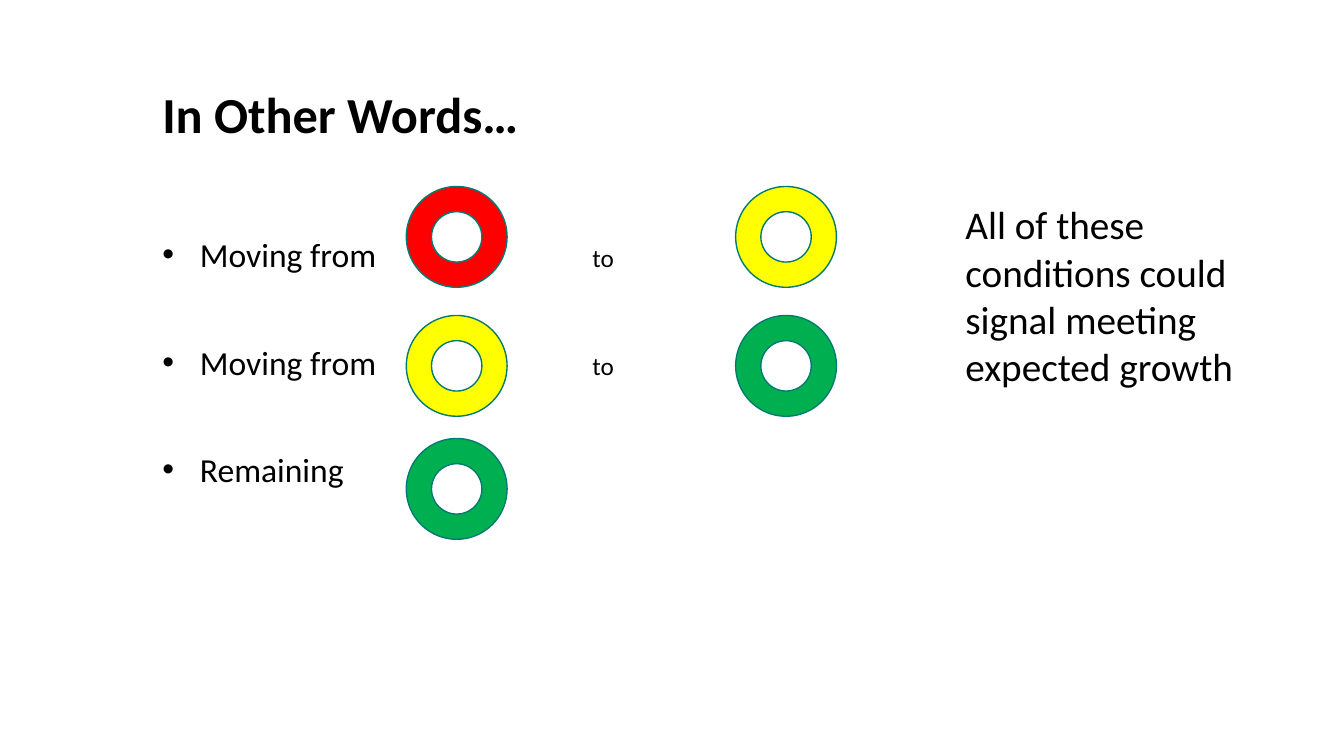
from dataclasses import dataclass

from lxml.etree import SubElement
from pptx import Presentation
from pptx.dml.color import RGBColor
from pptx.enum.shapes import MSO_SHAPE as Shp
from pptx.enum.text import MSO_ANCHOR as Anchor
from pptx.oxml.ns import qn
from pptx.slide import Slide
from pptx.util import Cm, Pt

COLORS = {
    "text": "000000",
    "outline": "007B73",
    "red": "FF0000",
    "yellow": "FFFF00",
    "green": "00B050",
}
DONUT_SIZE = 2.54
FROM_X, TO_X = 10.24, 18.54
ROW_Y = (4.7, 7.95, 11.05)


@dataclass
class Donut:
    x: float
    y: float
    color: str


@dataclass
class Label:
    lines: tuple[str, ...]
    x: float
    y: float
    w: float
    h: float
    size: int
    bold: bool = False
    bullets: bool = False
    gap: int = 0
    top_inset: float = 0.13
    anchor: Anchor = Anchor.TOP


DONUTS = [
    Donut(FROM_X, ROW_Y[0], "red"),
    Donut(FROM_X, ROW_Y[1], "yellow"),
    Donut(FROM_X, ROW_Y[2], "green"),
    Donut(TO_X, ROW_Y[0], "yellow"),
    Donut(TO_X, ROW_Y[1], "green"),
]

LABELS = [
    Label(("In Other Words…",), 3.84, 1.02, 28.6, 3.68, 36, bold=True, anchor=Anchor.MIDDLE),
    Label(("Moving from", "Moving from", "Remaining"), 3.84, 4.39, 28.6, 10.67, 24,
          bullets=True, gap=48, top_inset=1.51),
    Label(("to",), 14.68, 5.97, 2.54, 1.02, 18),
    Label(("to",), 14.68, 8.71, 2.54, 1.02, 18),
    Label(("All of these conditions could signal meeting expected growth",),
          24.08, 4.93, 8.36, 5.05, 28),
]


def rgb(name: str) -> RGBColor:
    return RGBColor.from_string(COLORS[name])


def add_donut(s: Slide, donut: Donut) -> None:
    sp = s.shapes.add_shape(Shp.DONUT, Cm(donut.x), Cm(donut.y), Cm(DONUT_SIZE), Cm(DONUT_SIZE))
    sp.shadow.inherit = False
    sp.fill.solid()
    sp.fill.fore_color.rgb = rgb(donut.color)
    sp.line.color.rgb = rgb("outline")
    sp.line.width = Pt(1)


def add_label(s: Slide, label: Label) -> None:
    sp = s.shapes.add_textbox(Cm(label.x), Cm(label.y), Cm(label.w), Cm(label.h))
    tf = sp.text_frame
    frame_format = {
        "word_wrap": True,
        "vertical_anchor": label.anchor,
        "margin_top": Cm(label.top_inset),
    }
    for name, value in frame_format.items():
        setattr(tf, name, value)

    font_format = {"name": "Calibri", "size": Pt(label.size), "bold": label.bold}
    for i, line in enumerate(label.lines):
        p = tf.add_paragraph() if i else tf.paragraphs[0]
        if i:
            p.space_before = Pt(label.gap)
        if label.bullets:
            pPr = p._p.get_or_add_pPr()
            pPr.set("marL", str(Cm(0.95)))
            pPr.set("indent", str(-Cm(0.95)))
            SubElement(pPr, qn("a:buFont"), typeface="Arial")
            SubElement(pPr, qn("a:buChar"), char="•")
        r = p.add_run()
        r.text = line
        for name, value in font_format.items():
            setattr(r.font, name, value)
        r.font.color.rgb = rgb("text")


def main() -> None:
    prs = Presentation()
    prs.slide_width, prs.slide_height = Cm(33.87), Cm(19.05)
    s = prs.slides.add_slide(prs.slide_layouts[6])

    # Title, bullets and side note
    for label in LABELS:
        add_label(s, label)

    # Status rings
    for donut in DONUTS:
        add_donut(s, donut)

    prs.save("out.pptx")


if __name__ == "__main__":
    main()
